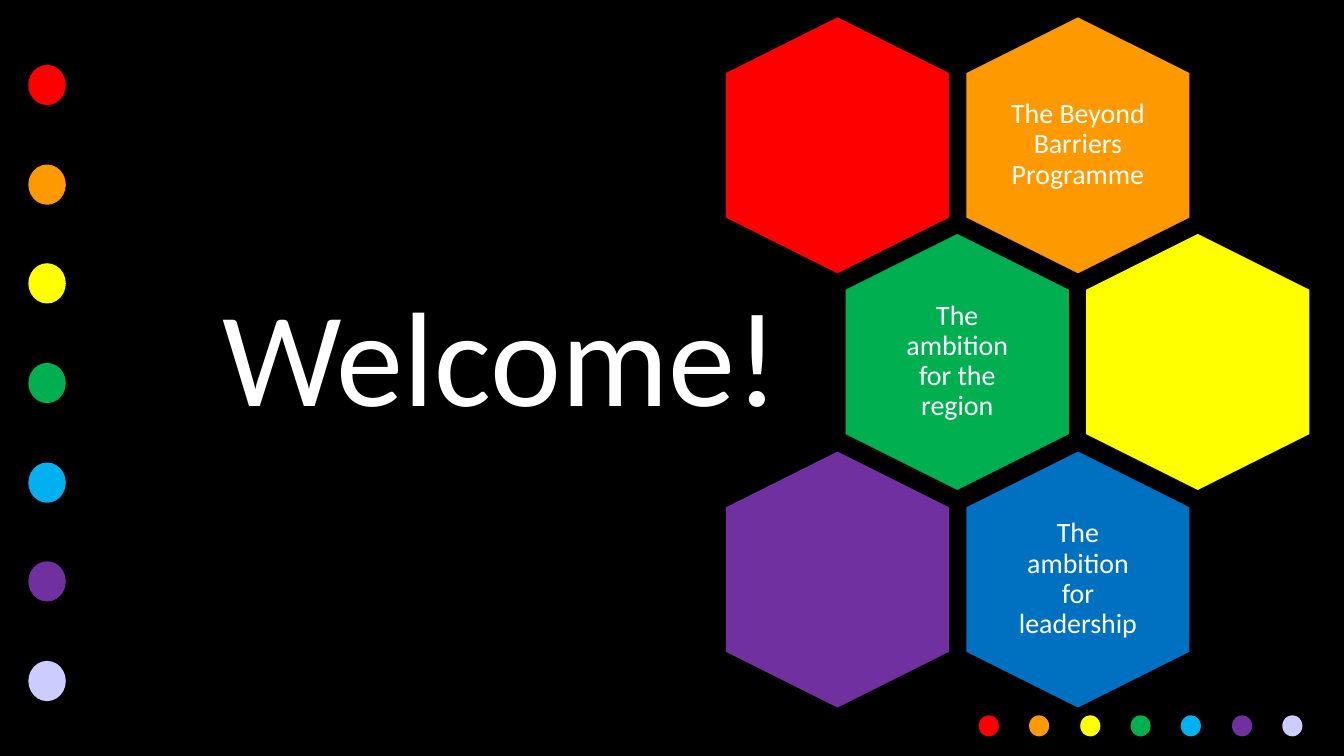
from dataclasses import dataclass

from pptx import Presentation
from pptx.dml.color import RGBColor
from pptx.enum.shapes import MSO_SHAPE
from pptx.enum.text import MSO_ANCHOR, MSO_AUTO_SIZE, PP_ALIGN
from pptx.util import Emu, Pt

EMU_PER_PX = 9144  # 100 px to the inch


@dataclass(frozen=True)
class Theme:
    font: str = "Calibri"
    title_size: float = 105.9
    label_size: float = 22
    background: str = "000000"
    text: str = "FFFFFF"
    red: str = "FF0000"
    orange: str = "FF9900"
    yellow: str = "FFFF00"
    green: str = "00B050"
    sky: str = "00B0F0"
    blue: str = "0070C0"
    purple: str = "7030A0"
    lavender: str = "CCCCFF"


THEME = Theme()
RAINBOW = (THEME.red, THEME.orange, THEME.yellow, THEME.green,
           THEME.sky, THEME.purple, THEME.lavender)

# Row, column, colour and label of each honeycomb cell
HONEYCOMB = (
    (0, 1, THEME.orange, "The Beyond Barriers Programme"),
    (0, 0, THEME.red, ""),
    (1, 0, THEME.green, "The ambition for the region"),
    (1, 1, THEME.yellow, ""),
    (2, 1, THEME.blue, "The ambition for leadership"),
    (2, 0, THEME.purple, ""),
)


def px(length):
    return Emu(length * EMU_PER_PX)


def add_plain_shape(shapes, kind, left, top, width, height, colour, rotation=0):
    shape = shapes.add_shape(kind, px(left), px(top), px(width), px(height))
    shape.rotation = rotation
    shape.shadow.inherit = False
    shape.fill.solid()
    shape.fill.fore_color.rgb = RGBColor.from_string(colour)
    shape.line.fill.background()
    return shape


def format_text(box, text, size, align, anchor, inset_x, inset_y):
    frame = box.text_frame
    frame.word_wrap = True
    frame.auto_size = MSO_AUTO_SIZE.NONE
    frame.vertical_anchor = anchor
    frame.margin_left = frame.margin_right = px(inset_x)
    frame.margin_top = frame.margin_bottom = px(inset_y)
    para = frame.paragraphs[0]
    para.text = text
    para.alignment = align
    para.line_spacing = 0.9
    para.space_before = Pt(0)
    para.font.name = THEME.font
    para.font.size = Pt(size)
    para.font.color.rgb = RGBColor.from_string(THEME.text)


def add_title(page, text):
    title = page.shapes.title
    title.left, title.top = px(233), px(313)
    title.width, title.height = px(1136), px(207)
    format_text(title, text, THEME.title_size, PP_ALIGN.LEFT, MSO_ANCHOR.TOP, 10, 5)


def add_side_dots(page):
    for index, colour in enumerate(RAINBOW):
        top = round(71 + index * 652 / 6)
        add_plain_shape(page.shapes, MSO_SHAPE.OVAL, 31, top, 41, 44, colour)


def add_bottom_dots(page):
    dots = page.shapes.add_group_shape().shapes
    for index, colour in enumerate(RAINBOW):
        left = round(1070 + index * 332 / 6)
        add_plain_shape(dots, MSO_SHAPE.OVAL, left, 783, 23, 22, colour, 270)


def add_honeycomb(page):
    """Place upright hexagons in rows, with each odd row shifted by half a cell."""
    cells = page.shapes.add_group_shape().shapes
    for row, column, colour, label in HONEYCOMB:
        left = 776 + 263 * column + 131 * (row % 2)
        top = round(37 + 237.5 * row)
        hexagon = add_plain_shape(cells, MSO_SHAPE.HEXAGON, left, top, 280, 244, colour, 90)
        hexagon.adjustments[0] = 0.25
        if label:
            box = cells.add_textbox(px(left + 56), px(top + 25), px(168), px(193))
            format_text(box, label, THEME.label_size, PP_ALIGN.CENTER, MSO_ANCHOR.MIDDLE, 9, 9)


def main():
    deck = Presentation()
    deck.slide_width, deck.slide_height = px(1470), px(827)
    page = deck.slides.add_slide(deck.slide_layouts[5])
    page.background.fill.solid()
    page.background.fill.fore_color.rgb = RGBColor.from_string(THEME.background)
    add_side_dots(page)
    add_bottom_dots(page)
    add_title(page, "Welcome!")
    add_honeycomb(page)
    deck.save("out.pptx")


if __name__ == "__main__":
    main()
